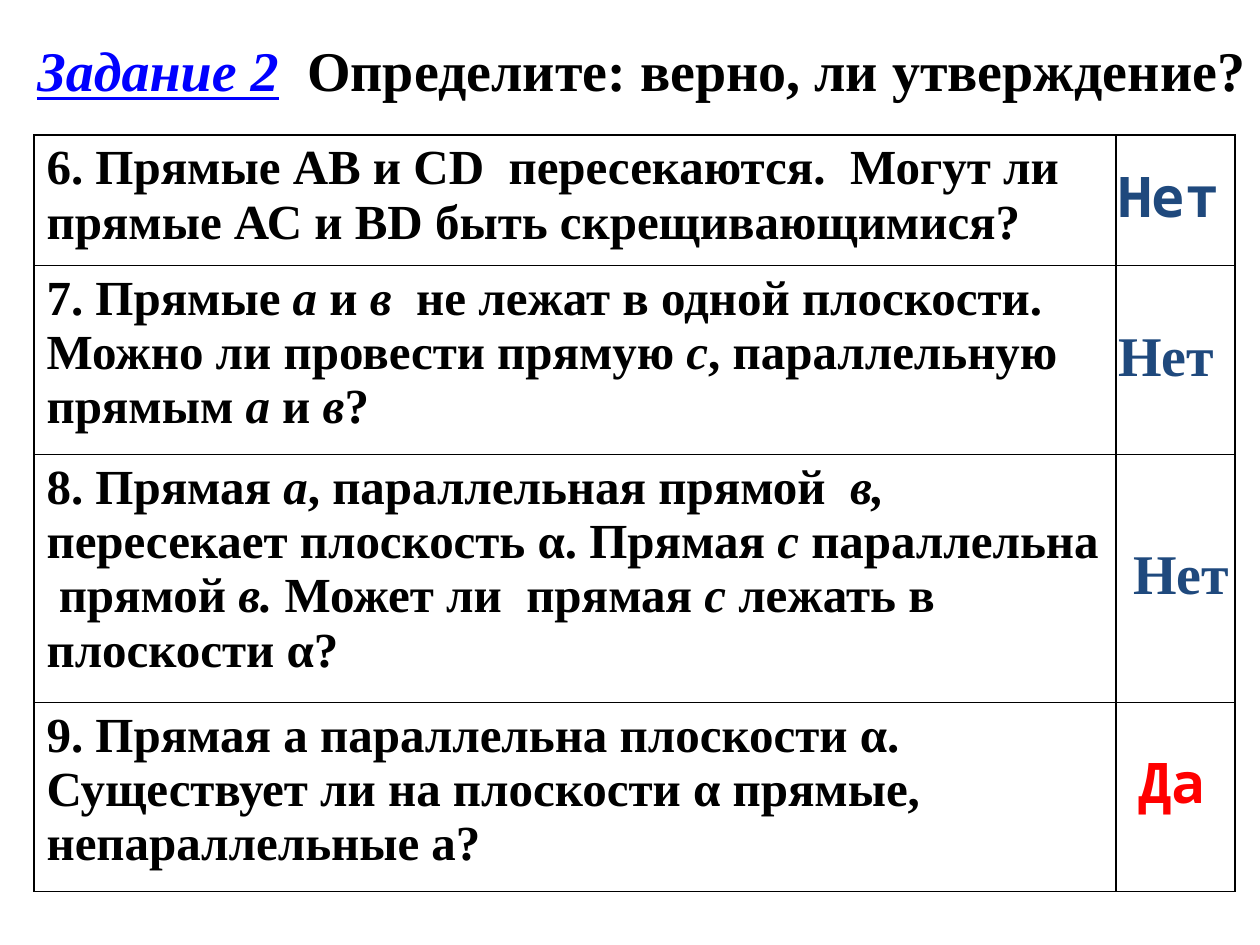
"""Builds a quiz slide with a table of true-or-false statements and their answers."""
from lxml.etree import SubElement
from pptx import Presentation
from pptx.dml.color import RGBColor
from pptx.enum.text import MSO_ANCHOR, MSO_AUTO_SIZE
from pptx.oxml import parse_xml
from pptx.oxml.ns import nsdecls, qn
from pptx.util import Emu, Pt

PX = 914400 // 126
COLORS = {"text": "000000", "task": "0000FF", "no": "1F497D", "yes": "FF0000"}
SERIF, MONO = "Times New Roman", "Noto Sans Mono"

TITLE = ("Задание 2", "  Определите: верно, ли утверждение?")
TITLE_BOX = (25, 30, 1235, 79)
# Asterisks enclose italic words.
STATEMENTS = [
    "6. Прямые АВ и СD  пересекаются.  Могут ли прямые АС и ВD быть скрещивающимися?",
    "7. Прямые *а* и *в*  не лежат в одной плоскости. Можно ли провести прямую *с*, "
    "параллельную прямым *а* и *в*?",
    "8. Прямая *а*, параллельная прямой  *в, *пересекает плоскость α. Прямая *с* "
    "параллельна  прямой *в. *Может ли  прямая *с* лежать в плоскости α?",
    "9. Прямая а параллельна плоскости α. Существует ли на плоскости α прямые, "
    "непараллельные а?",
]
TABLE_LEFT, TABLE_TOP = 34, 135
COLUMN_WIDTHS = (1082, 119)
ROW_HEIGHTS = (130, 189, 248, 189)
ANSWERS = [
    ("Нет", MONO, "no", (1106, 155, 154, 79)),
    ("Нет", SERIF, "no", (1106, 314, 123, 79)),
    ("Нет", SERIF, "no", (1121, 532, 139, 79)),
    ("Да", MONO, "yes", (1126, 741, 100, 79)),
]


def px(*lengths):
    return [Emu(length * PX) for length in lengths]


def set_font(font, size, color, name=SERIF):
    font.name, font.size, font.bold = name, Pt(size), True
    font.color.rgb = RGBColor.from_string(COLORS[color])


def add_box(slide, box):
    frame = slide.shapes.add_textbox(*px(*box)).text_frame
    frame.word_wrap = True
    frame.auto_size = MSO_AUTO_SIZE.SHAPE_TO_FIT_TEXT
    return frame


def add_title(slide):
    frame = add_box(slide, TITLE_BOX)
    frame.vertical_anchor = MSO_ANCHOR.MIDDLE
    paragraph = frame.paragraphs[0]
    for text, color in zip(TITLE, ("task", "text")):
        run = paragraph.add_run()
        run.text = text
        set_font(run.font, 32, color)
        run.font.italic = run.font.underline = color == "task"


def style_cell(cell):
    cell.fill.background()
    properties = cell._tc.get_or_add_tcPr()
    for index, side in enumerate("LRTB"):
        line = parse_xml(f'<a:ln{side} {nsdecls("a")} w="{Pt(1)}"/>')
        fill = SubElement(line, qn("a:solidFill"))
        SubElement(fill, qn("a:srgbClr"), val=COLORS["text"])
        properties.insert(index, line)


def write_statement(cell, statement):
    paragraph = cell.text_frame.paragraphs[0]
    set_font(paragraph.font, 28, "text")
    for index, part in enumerate(statement.split("*")):
        run = paragraph.add_run()
        run.text = part
        set_font(run.font, 28, "text")
        run.font.italic = index % 2 == 1


def add_statements(slide):
    size = px(TABLE_LEFT, TABLE_TOP, sum(COLUMN_WIDTHS), sum(ROW_HEIGHTS))
    table = slide.shapes.add_table(len(STATEMENTS), len(COLUMN_WIDTHS), *size).table
    table.first_row = table.horz_banding = False
    for column, width in zip(table.columns, px(*COLUMN_WIDTHS)):
        column.width = width
    for row, height, statement in zip(table.rows, px(*ROW_HEIGHTS), STATEMENTS):
        row.height = height
        for cell in row.cells:
            style_cell(cell)
        write_statement(row.cells[0], statement)


def add_answers(slide):
    for text, font_name, color, box in ANSWERS:
        paragraph = add_box(slide, box).paragraphs[0]
        paragraph.text = text
        set_font(paragraph.font, 32, color, font_name)


def main():
    presentation = Presentation()
    presentation.slide_width, presentation.slide_height = px(1260, 945)
    slide = presentation.slides.add_slide(presentation.slide_layouts[6])
    add_title(slide)
    add_statements(slide)
    add_answers(slide)
    presentation.save("out.pptx")


if __name__ == "__main__":
    main()
